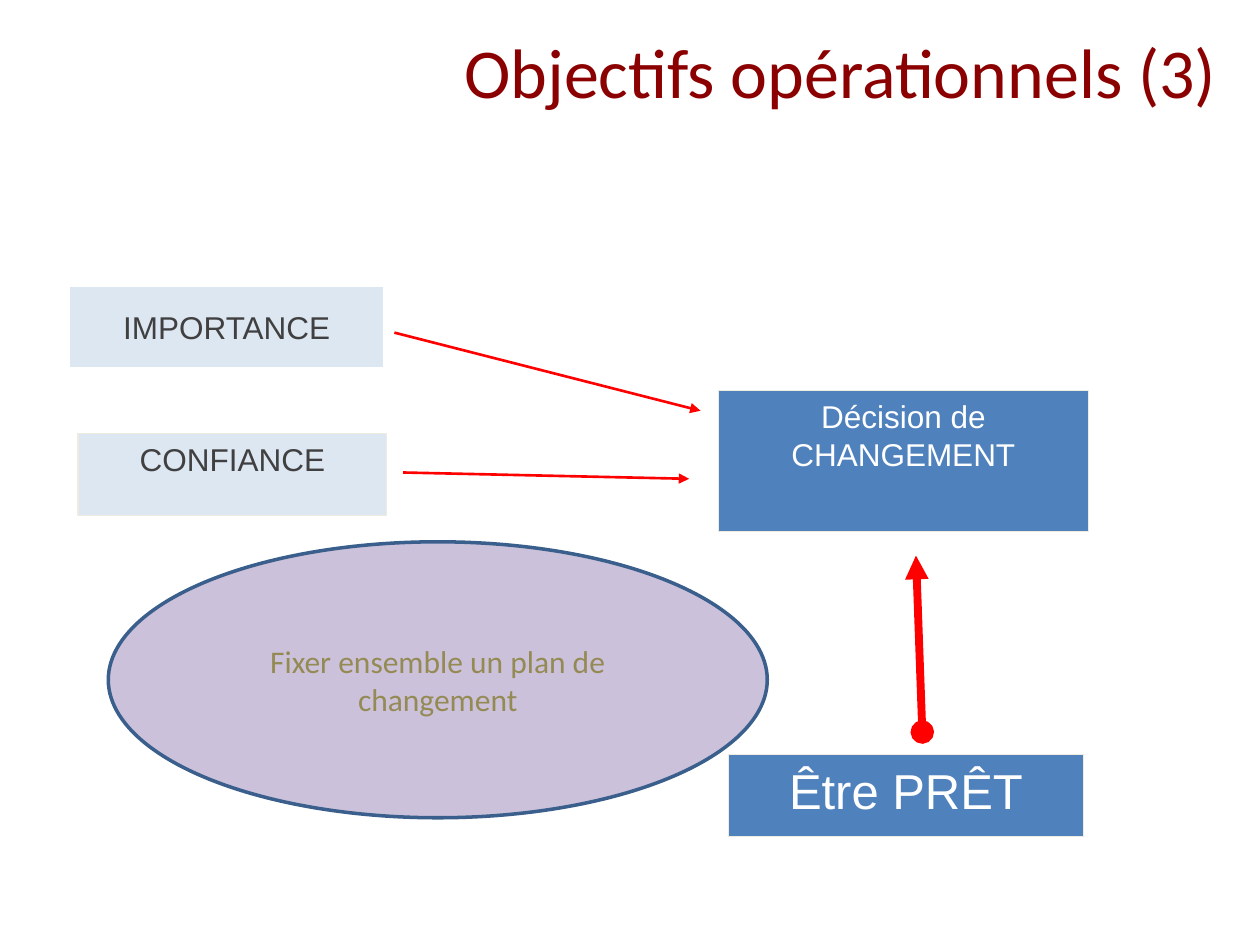
from dataclasses import dataclass

from lxml.etree import SubElement
from pptx import Presentation
from pptx.dml.color import RGBColor
from pptx.enum.shapes import MSO_CONNECTOR, MSO_SHAPE
from pptx.enum.text import MSO_ANCHOR, PP_ALIGN
from pptx.oxml.ns import qn
from pptx.util import Inches, Pt

COLS, ROWS = 100, 75


@dataclass(frozen=True)
class Theme:
    """Colours, fonts and type sizes of the slide."""
    white: str = "FFFFFF"
    title: str = "8B0000"
    blue: str = "4F81BD"
    cream: str = "EEECE1"
    dark: str = "404040"
    red: str = "FF0000"
    lilac: str = "CCC1DA"
    navy: str = "3A5F8C"
    olive: str = "948A54"
    sans: str = "Arial"
    soft: str = "Calibri"
    small: int = 18
    large: int = 28
    huge: int = 40


LOOK = Theme()


@dataclass(frozen=True)
class Box:
    """A filled shape with text, placed in grid columns and rows."""
    text: str
    left: float
    top: float
    width: float
    height: float
    ink: str = LOOK.white
    size: int = LOOK.small
    font: str = LOOK.sans
    fill: str = LOOK.blue
    alpha: int = 100
    edge: str = LOOK.cream
    weight: float = 0.75
    kind: MSO_SHAPE = MSO_SHAPE.RECTANGLE
    anchor: MSO_ANCHOR = MSO_ANCHOR.TOP


@dataclass(frozen=True)
class Arrow:
    """A red arrow between two grid points."""
    start: tuple[float, float]
    end: tuple[float, float]
    weight: float = 1.5
    head: str = "none"


BOXES = [
    Box("CONFIANCE", 6.2, 34.4, 24.5, 6.5, ink=LOOK.dark, alpha=19),
    Box("IMPORTANCE", 5.5, 22.7, 25, 6.5, ink=LOOK.dark, alpha=19,
        edge=LOOK.white, weight=1, anchor=MSO_ANCHOR.MIDDLE),
    Box("Être PRÊT", 57.8, 59.9, 28.2, 6.5, size=LOOK.large),
    Box("Décision de\vCHANGEMENT", 57, 31, 29.4, 11.2),
    Box("Fixer ensemble un plan de changement", 8.6, 43, 52.3, 21.9,
        ink=LOOK.olive, font=LOOK.soft, fill=LOOK.lilac, edge=LOOK.navy,
        weight=2, kind=MSO_SHAPE.OVAL, anchor=MSO_ANCHOR.MIDDLE),
]
ARROWS = [
    Arrow((31.3, 26.4), (55.6, 32.6)),
    Arrow((32, 37.5), (54.7, 38)),
    Arrow((73.2, 58.1), (72.7, 44.1), weight=4.5, head="oval"),
]


def grid(*cells: float) -> list[int]:
    """Turn grid cells into slide lengths."""
    return [Inches(cell / 10) for cell in cells]


def tint(text: str) -> RGBColor:
    """Turn a hex string into a colour."""
    return RGBColor.from_string(text)


def write(frame, text: str, *, size: int, font: str, ink: str,
          anchor: MSO_ANCHOR = MSO_ANCHOR.TOP) -> None:
    """Put centred text of one format in a frame."""
    frame.word_wrap = True
    frame.vertical_anchor = anchor
    para = frame.paragraphs[0]
    para.text = text
    para.alignment = PP_ALIGN.CENTER
    for run in para.runs:
        run.font.size = Pt(size)
        run.font.name = font
        run.font.color.rgb = tint(ink)


def draw_title(slide, text: str) -> None:
    """Draw the slide heading."""
    frame = slide.shapes.add_textbox(*grid(21.7, 1.2, 90, 8.7)).text_frame
    frame.margin_bottom = Inches(0.1)
    write(frame, text, size=LOOK.huge, font=LOOK.soft, ink=LOOK.title,
          anchor=MSO_ANCHOR.BOTTOM)


def draw_box(slide, box: Box) -> None:
    """Draw one box with its text."""
    place = grid(box.left, box.top, box.width, box.height)
    shape = slide.shapes.add_shape(box.kind, *place)
    shape.shadow.inherit = False
    shape.fill.solid()
    shape.fill.fore_color.rgb = tint(box.fill)
    if box.alpha < 100:
        color = shape.element.spPr.find(qn("a:solidFill"))[0]
        SubElement(color, qn("a:alpha"), val=str(box.alpha * 1000))
    shape.line.color.rgb = tint(box.edge)
    shape.line.width = Pt(box.weight)
    write(shape.text_frame, box.text, size=box.size, font=box.font,
          ink=box.ink, anchor=box.anchor)


def draw_arrow(slide, arrow: Arrow) -> None:
    """Draw one arrow."""
    link = slide.shapes.add_connector(
        MSO_CONNECTOR.STRAIGHT, *grid(*arrow.start, *arrow.end))
    link.line.color.rgb = tint(LOOK.red)
    link.line.width = Pt(arrow.weight)
    line = link.line._get_or_add_ln()
    SubElement(line, qn("a:headEnd"), type=arrow.head)
    SubElement(line, qn("a:tailEnd"), type="triangle")
    SubElement(link.element.spPr, qn("a:effectLst"))


def main() -> None:
    """Build and save the slide."""
    deck = Presentation()
    deck.slide_width, deck.slide_height = grid(COLS, ROWS)
    slide = deck.slides.add_slide(deck.slide_layouts[6])
    draw_title(slide, "Objectifs opérationnels (3)")
    for arrow in ARROWS:
        draw_arrow(slide, arrow)
    for box in BOXES:
        draw_box(slide, box)
    deck.save("out.pptx")


if __name__ == "__main__":
    main()
